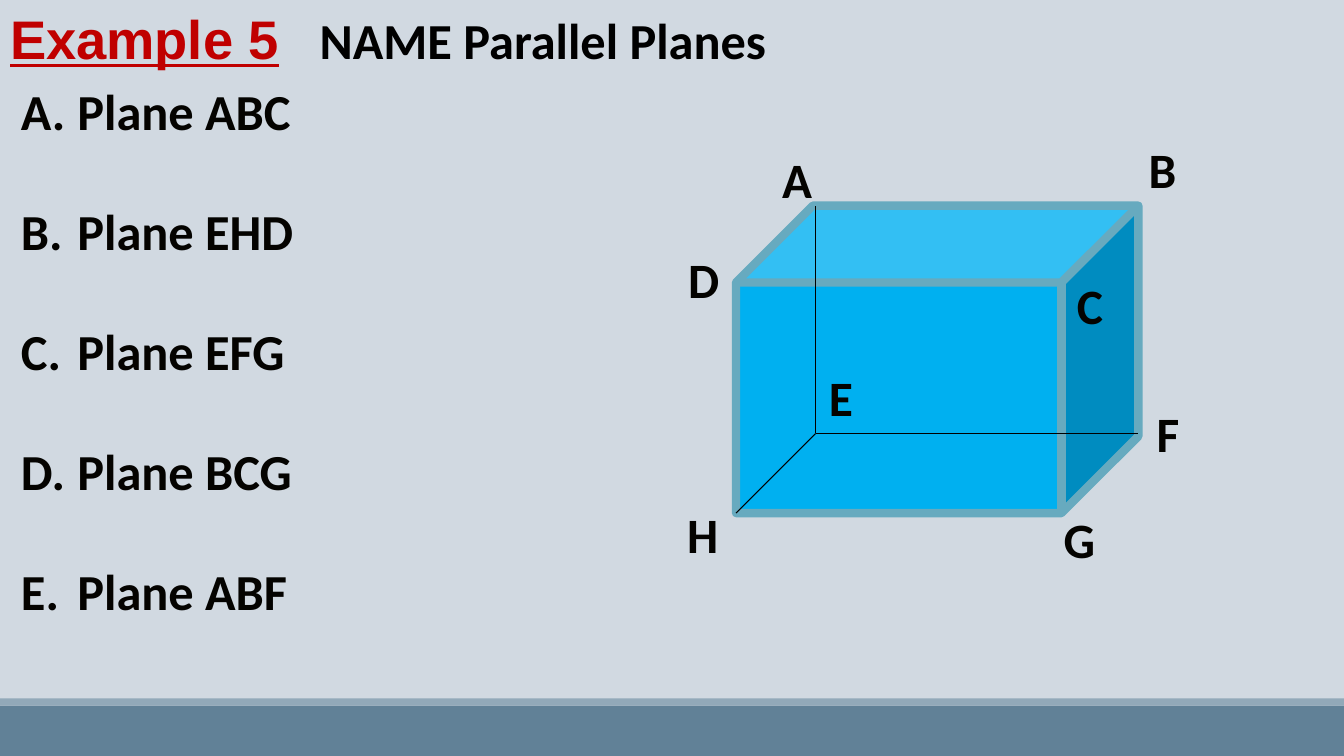
from lxml import etree
from pptx import Presentation
from pptx.dml.color import RGBColor
from pptx.enum.shapes import MSO_CONNECTOR as CONNECTOR, MSO_SHAPE as SHAPE
from pptx.enum.text import MSO_ANCHOR as ANCHOR, PP_ALIGN as ALIGN
from pptx.oxml.ns import qn
from pptx.util import Inches, Pt

BACKGROUND = RGBColor(0xD1, 0xD9, 0xE1)
BAND = RGBColor(0x61, 0x81, 0x97)
STRIPE = RGBColor(0x92, 0xA9, 0xB9)
RED = RGBColor(0xC0, 0x00, 0x00)
BLACK = RGBColor(0x00, 0x00, 0x00)
INK = RGBColor(0x04, 0x03, 0x00)
PRISM_FILL = RGBColor(0x00, 0xB0, 0xF0)
PRISM_EDGE = RGBColor(0x67, 0xAA, 0xBF)

# Content
HEADING = "Example 5"
TOPIC = "NAME Parallel Planes"
PLANES = ["Plane ABC", "Plane EHD", "Plane EFG", "Plane BCG", "Plane ABF"]
FOOTER_BANDS = [(7, 0.5, BAND), (6.93, 0.07, STRIPE)]  # top, height, colour
VERTICES = {  # left, top, width of each label
    "A": (7.61, 1.43, 0.59), "G": (10.45, 5, 0.42),
    "H": (6.67, 4.95, 0.6), "F": (11.33, 3.95, 0.51),
    "E": (8.08, 3.59, 0.52), "D": (6.68, 2.42, 0.6),
    "C": (10.54, 2.68, 0.54), "B": (11.25, 1.33, 0.56),
}
LABEL_HEIGHT = 0.82

# Prism geometry
LEFT, TOP, WIDTH, HEIGHT, DEPTH = 7.3, 2.04, 3.99, 3.05, 0.79
RIGHT, BOTTOM = LEFT + WIDTH, TOP + HEIGHT
CORNER_E = (LEFT + DEPTH, BOTTOM - DEPTH)
HIDDEN_ENDS = [(LEFT + DEPTH, TOP), (LEFT, BOTTOM), (RIGHT, CORNER_E[1])]  # A, H, F

prs = Presentation()
prs.slide_width, prs.slide_height = Inches(13.33), Inches(7.5)
slide = prs.slides.add_slide(prs.slide_layouts[5])
slide.background.fill.solid()
slide.background.fill.fore_color.rgb = BACKGROUND


def add_solid(kind, left, top, width, height, color):
    solid = slide.shapes.add_shape(
        kind, Inches(left), Inches(top), Inches(width), Inches(height))
    solid.shadow.inherit = False
    solid.fill.solid()
    solid.fill.fore_color.rgb = color
    solid.line.fill.background()
    return solid


def style(paragraph, size, color, font="Calibri"):
    for run in paragraph.runs:
        run.font.name, run.font.size, run.font.bold = font, Pt(size), True
        run.font.color.rgb = color


def add_text(text, left, top, width, height, size, color, wrap=True):
    box = slide.shapes.add_textbox(
        Inches(left), Inches(top), Inches(width), Inches(height))
    frame = box.text_frame
    frame.word_wrap = wrap
    frame.text = text
    for paragraph in frame.paragraphs:
        style(paragraph, size, color)
    return frame


# Footer
for top, height, color in FOOTER_BANDS:
    add_solid(SHAPE.RECTANGLE, 0, top, 13.33, height, color)

# Heading and topic
heading = slide.shapes.title
heading.left, heading.top = Inches(0), Inches(0)
heading.width, heading.height = Inches(2.94), Inches(0.75)
heading.text_frame.text = HEADING
heading.text_frame.vertical_anchor = ANCHOR.TOP
heading_line = heading.text_frame.paragraphs[0]
heading_line.alignment = ALIGN.LEFT
style(heading_line, 38.8, RED, "Arial")
heading_line.runs[0].font.underline = True

topic = add_text(TOPIC, 3.17, 0.21, 9.29, 0.55, 36, BLACK)
topic.margin_left = topic.margin_right = 0
topic.paragraphs[0].line_spacing = 0.7

# Prism with its hidden edges
prism = add_solid(SHAPE.CUBE, LEFT, TOP, WIDTH, HEIGHT, PRISM_FILL)
prism.adjustments[0] = 0.25
prism.line.color.rgb = PRISM_EDGE
prism.line.width = Pt(6)
for end in HIDDEN_ENDS:
    edge = slide.shapes.add_connector(
        CONNECTOR.STRAIGHT, *(Inches(value) for value in CORNER_E + end))
    edge.line.color.rgb = BLACK
    edge.line.width = Pt(0.75)
    etree.SubElement(edge._element.spPr, qn("a:effectLst"))

# Vertex labels
for vertex, (left, top, width) in VERTICES.items():
    label = add_text(vertex, left, top, width, LABEL_HEIGHT, 35.3, INK, wrap=False)
    label.paragraphs[0].alignment = ALIGN.CENTER

# Lettered list of planes
planes = add_text("\n".join(PLANES), 0.11, 0.75, 4.56, 6.25, 36, INK)
for plane in planes.paragraphs:
    plane.space_after = Pt(42.5)
    props = plane._p.get_or_add_pPr()
    props.set("marL", str(Inches(0.56)))
    props.set("indent", str(-Inches(0.56)))
    etree.SubElement(props, qn("a:buFont"), typeface="+mj-lt")
    etree.SubElement(props, qn("a:buAutoNum"), type="alphaUcPeriod")

prs.save("out.pptx")
